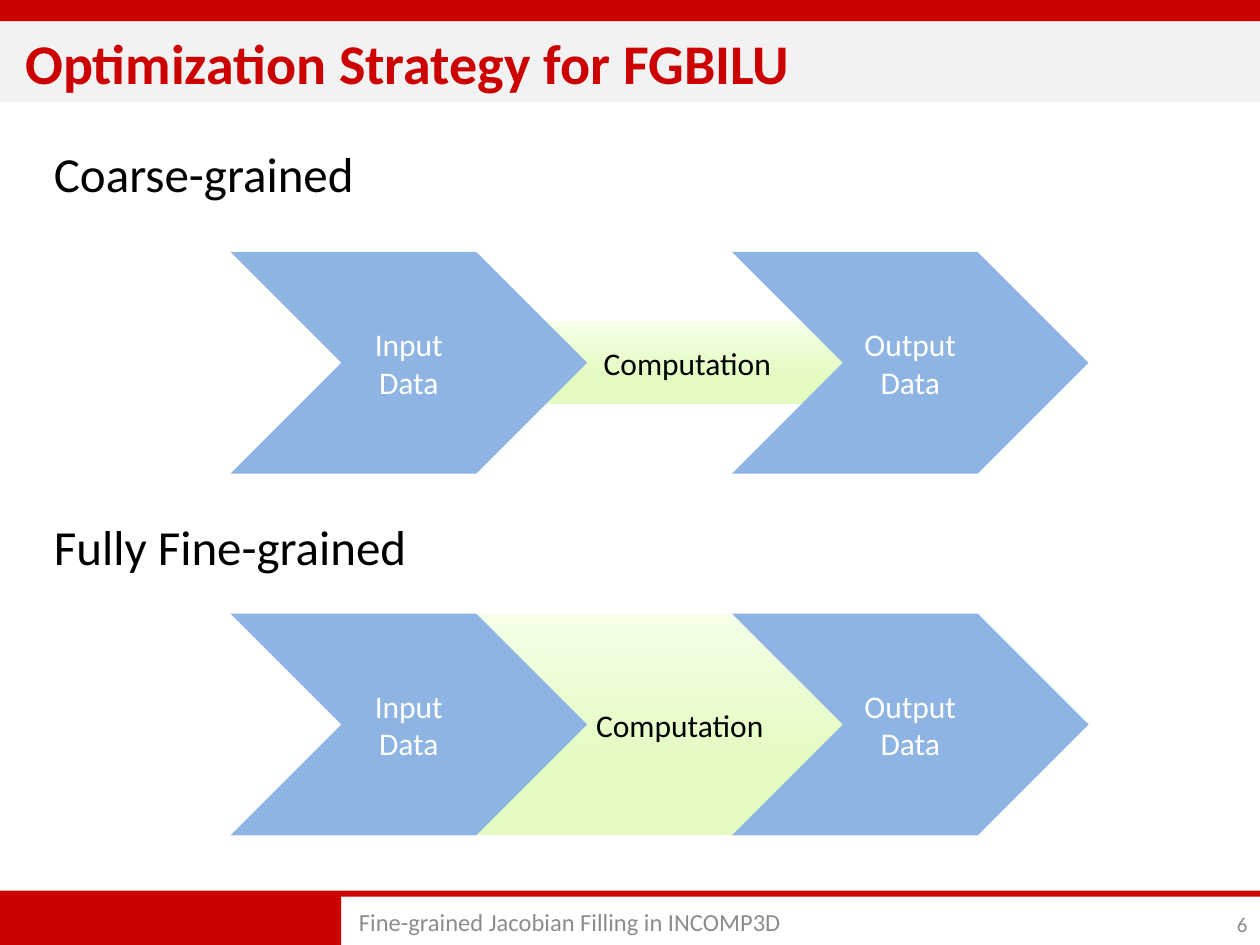
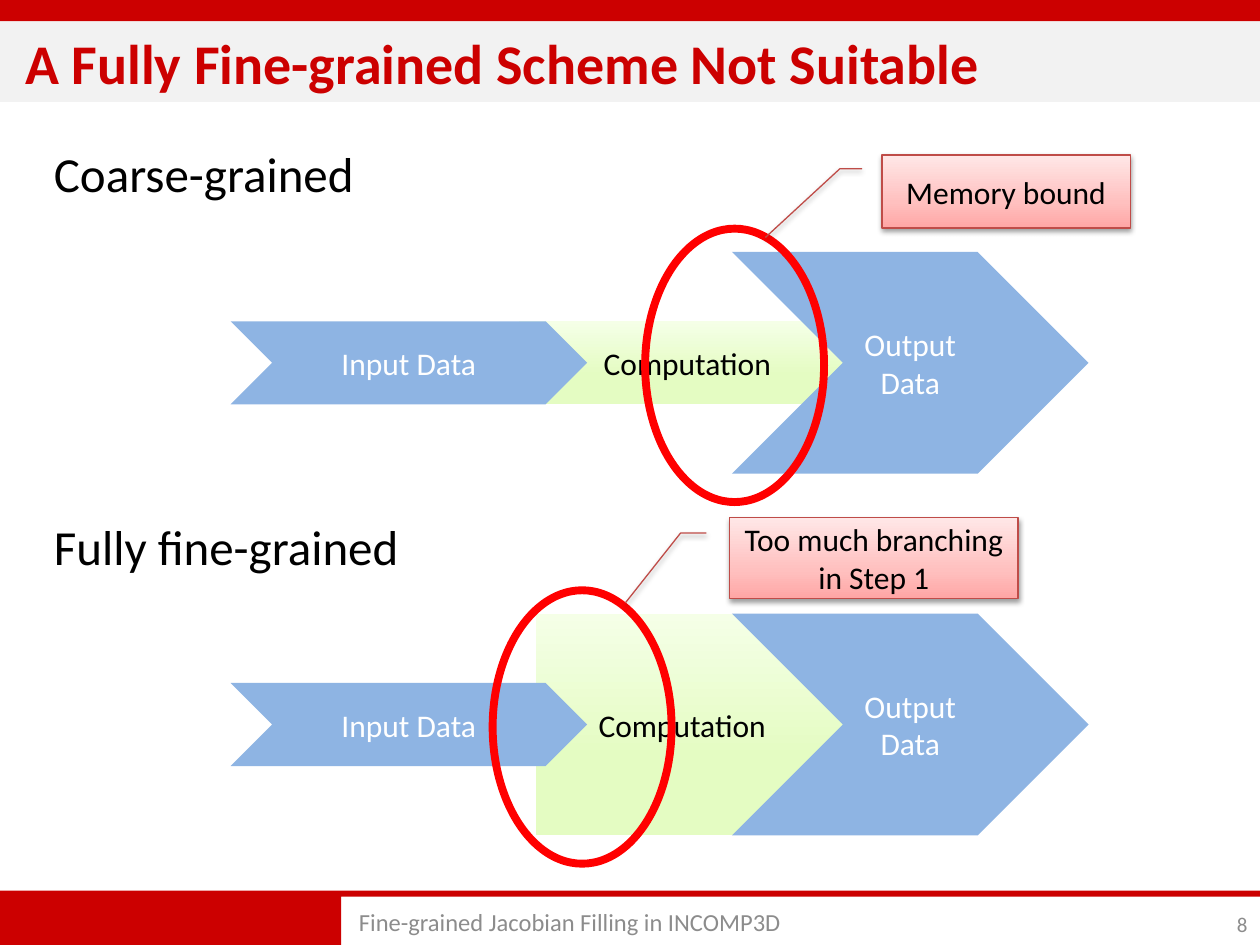
from lxml import etree
from pptx import Presentation
from pptx.dml.color import RGBColor
from pptx.enum.shapes import MSO_SHAPE
from pptx.enum.text import MSO_ANCHOR, PP_ALIGN
from pptx.oxml.ns import qn
from pptx.util import Inches, Pt

RECTANGLE, ELLIPSE = MSO_SHAPE.RECTANGLE, MSO_SHAPE.OVAL
CHEVRON, CORNER = MSO_SHAPE.CHEVRON, MSO_SHAPE.CORNER
CALLOUT = MSO_SHAPE.LINE_CALLOUT_2
TOP, MIDDLE = MSO_ANCHOR.TOP, MSO_ANCHOR.MIDDLE
LEFT, CENTER, RIGHT = PP_ALIGN.LEFT, PP_ALIGN.CENTER, PP_ALIGN.RIGHT

FONT = "Calibri"
FOOTER = "Fine-grained Jacobian Filling in INCOMP3D"

BLACK = RGBColor(0x00, 0x00, 0x00)
WHITE = RGBColor(0xFF, 0xFF, 0xFF)
BAND_RED = RGBColor(0xCC, 0x00, 0x00)
TITLE_GREY = RGBColor(0xF2, 0xF2, 0xF2)
FOOTER_GREY = RGBColor(0x8C, 0x8C, 0x8C)
DATA_BLUE = RGBColor(0x8E, 0xB4, 0xE3)
RING_RED = RGBColor(0xFF, 0x00, 0x00)
CALLOUT_EDGE = RGBColor(0xBF, 0x4C, 0x48)

# Gradient stops: percent from the bottom edge, colour
GREEN_STOPS = [(0, RGBColor(0xE4, 0xFC, 0xC2)), (35, RGBColor(0xE4, 0xFC, 0xC2)),
               (100, RGBColor(0xF5, 0xFF, 0xE7))]
PINK_STOPS = [(0, RGBColor(0xFF, 0xA6, 0xA5)), (35, RGBColor(0xFF, 0xC0, 0xBF)),
              (100, RGBColor(0xFF, 0xE7, 0xE7))]

# Data flow geometry in inches
INPUT_X, OUTPUT_X, DATA_W = 1.83, 5.81, 2.83
WIDE, NARROW = 1.76, 0.66
COARSE_MID, FINE_MID = 2.88, 5.75


def write(shape, text, size, color, align=CENTER, anchor=MIDDLE, bold=False):
    frame = shape.text_frame
    frame.word_wrap = True
    frame.vertical_anchor = anchor
    paragraph = frame.paragraphs[0]
    paragraph.alignment = align
    run = paragraph.add_run()
    run.text = text
    run.font.name = FONT
    run.font.size = Pt(size)
    run.font.bold = bold
    run.font.color.rgb = color


def add_label(slide, box, text, size, color, **style):
    label = slide.shapes.add_textbox(*map(Inches, box))
    write(label, text, size, color, **style)


def fill_gradient(shape, stops):
    shape.fill.gradient()
    shape.fill.gradient_angle = 90
    stop_list = shape.element.spPr.find(qn("a:gradFill")).find(qn("a:gsLst"))
    for default_stop in list(stop_list):
        stop_list.remove(default_stop)
    for percent, color in stops:
        stop = etree.SubElement(stop_list, qn("a:gs"), pos=str(percent * 1000))
        etree.SubElement(stop, qn("a:srgbClr"), val=str(color))


def add_shape(slide, kind, box, fill=None, edge=None, edge_width=0.75):
    """Fill is a colour, a list of gradient stops or None."""
    shape = slide.shapes.add_shape(kind, *map(Inches, box))
    shape.shadow.inherit = False
    if fill is None:
        shape.fill.background()
    elif isinstance(fill, list):
        fill_gradient(shape, fill)
    else:
        shape.fill.solid()
        shape.fill.fore_color.rgb = fill
    if edge is None:
        shape.line.fill.background()
    else:
        shape.line.color.rgb = edge
        shape.line.width = Pt(edge_width)
    return shape


def drop_shadow(shape):
    effects = shape.element.spPr.find(qn("a:effectLst"))
    shadow = etree.SubElement(effects, qn("a:outerShdw"), blurRad=str(Pt(3.1)),
                              dist=str(Pt(1.6)), dir="5400000", rotWithShape="0")
    color = etree.SubElement(shadow, qn("a:srgbClr"), val=str(BLACK))
    etree.SubElement(color, qn("a:alpha"), val="38000")


def add_frame(prs, title, number):
    """Start a slide with its bands, title and footer."""
    slide = prs.slides.add_slide(prs.slide_layouts[6])
    footer_band = add_shape(slide, CORNER, (0, 7.07, 10, 0.43), BAND_RED)
    footer_band.adjustments[0] = 0.11
    footer_band.adjustments[1] = 6.3
    footer_band.element.spPr.find(qn("a:xfrm")).set("flipV", "1")
    add_shape(slide, RECTANGLE, (0, 0, 10, 0.17), BAND_RED)
    title_band = add_shape(slide, RECTANGLE, (0, 0.17, 10, 0.64), TITLE_GREY)
    title_band.text_frame.margin_left = Inches(0.2)
    write(title_band, title, 32, BAND_RED, align=LEFT, bold=True)
    add_label(slide, (2.75, 7.13, 5.58, 0.37), FOOTER, 14, FOOTER_GREY, align=LEFT)
    add_label(slide, (9.42, 7.17, 0.58, 0.33), str(number), 12, FOOTER_GREY, align=RIGHT)
    return slide


def add_headings(slide, coarse, fine):
    for text, top in ((coarse, 1.09), (fine, 4.05)):
        add_label(slide, (0.33, top, 4.42, 0.7), text, 28, BLACK, align=LEFT, anchor=TOP)


def add_data(slide, text, left, middle, height):
    chevron = add_shape(slide, CHEVRON, (left, middle - height / 2, DATA_W, height), DATA_BLUE)
    write(chevron, text, 18, WHITE)


def add_flow(slide, middle, input_height, computation, indent=None):
    """Computation is left, width and height; an indent aligns its text left."""
    left, width, height = computation
    box = add_shape(slide, RECTANGLE, (left, middle - height / 2, width, height), GREEN_STOPS)
    if indent is not None:
        box.text_frame.margin_left = Inches(indent)
    write(box, "Computation", 18, BLACK, align=CENTER if indent is None else LEFT)
    add_data(slide, "Input Data", INPUT_X, middle, input_height)
    add_data(slide, "Output Data", OUTPUT_X, middle, WIDE)


def add_problem(slide, ring_left, middle, text, box, leader):
    """Ring a bottleneck and name it; leader holds the callout line's points."""
    ring_height = 2.17
    add_shape(slide, ELLIPSE, (ring_left, middle + 0.02 - ring_height / 2, 1.42, ring_height),
              edge=RING_RED, edge_width=4.5)
    callout = add_shape(slide, CALLOUT, box, PINK_STOPS, CALLOUT_EDGE)
    for index, value in enumerate(leader):
        callout.adjustments[index] = value
    drop_shadow(callout)
    write(callout, text, 18, BLACK)


def main():
    prs = Presentation()
    prs.slide_width, prs.slide_height = Inches(10), Inches(7.5)

    # Strategy: coarse and fully fine-grained flows
    strategy = add_frame(prs, "Optimization Strategy for FGBILU", 6)
    add_headings(strategy, "Coarse-grained", "Fully Fine-grained")
    add_flow(strategy, COARSE_MID, WIDE, (4.12, 2.67, NARROW))
    add_flow(strategy, FINE_MID, WIDE, (3.52, 3.75, WIDE))

    # Drawbacks: the same flows with narrow input and their bottlenecks
    drawbacks = add_frame(prs, "A Fully Fine-grained Scheme Not Suitable", 8)
    add_headings(drawbacks, "Coarse-grained", "Fully fine-grained")
    add_flow(drawbacks, FINE_MID, NARROW, (4.25, 3.02, WIDE), indent=0.5)
    add_flow(drawbacks, COARSE_MID, NARROW, (4.12, 2.67, NARROW))
    add_problem(drawbacks, 3.91, FINE_MID, "Too much branching in Step 1",
                (5.79, 4.11, 2.29, 0.64), (0.19, -0.08, 0.19, -0.17, 1.05, -0.36))
    add_problem(drawbacks, 5.12, COARSE_MID, "Memory bound",
                (7, 1.23, 1.97, 0.58), (0.19, -0.08, 0.19, -0.17, 1.13, -0.47))

    prs.save("out.pptx")


if __name__ == "__main__":
    main()
